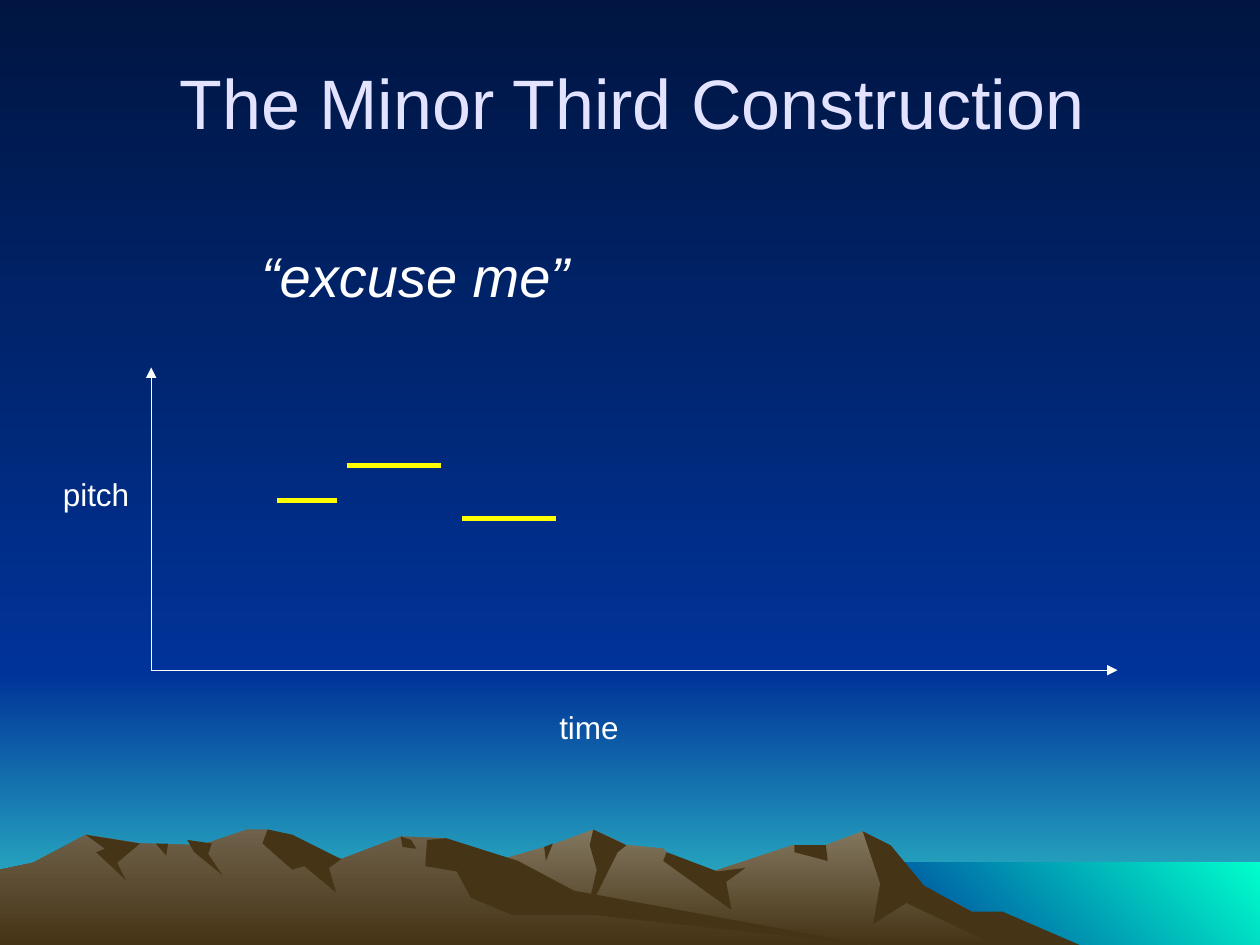
from lxml import etree
from pptx import Presentation
from pptx.dml.color import RGBColor
from pptx.enum import shapes, text
from pptx.oxml.ns import qn
from pptx.util import Pt

THEME = {
    "font": "Arial",
    "title_size": 40, "body_size": 32, "label_size": 18,
    "title": "E3E3FF", "text": "FFFFFF", "note": "FFFF00",
    "sky": ("001541", "003399"), "horizon": ("003399", "33CCCC"),
    "water": ("003399", "00FFCC"),
    "far_ridge": ("82775F", "463416"), "near_ridge": ("6F614A", "463416"),
    "shade": ("463416",),
}
WIDTH, HEIGHT = 720, 540

# Content: text, (left, top, width, height)
TITLE = ("The Minor Third Construction", (7, 13, 708, 90))
PHRASE = ("“excuse me”", (142, 134.5, 614, 65))
LABELS = [("pitch", (28.8, 268, 52.5, 29)), ("time", (312.5, 401, 49, 29))]

# Axes share an origin; each note is start, end, height
ORIGIN = (86.4, 383)
AXIS_ENDS = [(ORIGIN[0], 210), (638.6, ORIGIN[1])]
NOTES = [(158.5, 192.5, 285.8), (198, 252, 266), (264, 318, 296.5)]

# Bands reach the right and bottom edges: colours, left, top, gradient angle
BANDS = [("horizon", 0, 384, 270), ("water", 492, 493, 45)]
SKY_DEPTH = 384

# Mountains, from back to front: colours, outline
MOUNTAINS = [
    ("far_ridge", [
        (591, HEIGHT), (521, 503), (493, 475), (472, 483), (453, 483),
        (408, 498), (386, 493), (379, 485), (358, 483), (339, 474),
        (315, 483), (284, 492), (186, HEIGHT)]),
    ("shade", [
        (617, HEIGHT), (573, 521), (555, 521), (528, 506), (509, 483),
        (493, 475), (503, 505), (499, 528), (518, 516), (569, HEIGHT)]),
    ("shade", [
        (339, 474), (337, 483), (341, 497), (335, 523), (353, 487), (358, 483)]),
    ("shade", [(381, 487), (379, 492), (418, 520), (415, 504), (426, 496),
               (410, 498)]),
    ("shade", [(454, 483), (454, 487), (473, 492), (472, 483)]),
    ("shade", [(311, 484), (316, 482), (312, 492)]),
    ("near_ridge", [
        (497, HEIGHT), (311, 513), (255, 479), (229, 478), (195, 491),
        (161, 477), (153, 474), (141, 474), (115, 483), (80, 482), (49, 477),
        (19, 493), (0, 497), (0, HEIGHT)]),
    ("shade", [
        (153, 474), (150, 482), (167, 497), (174, 495), (192, 510), (188, 496),
        (195, 491), (167, 477)]),
    ("shade", [
        (255, 479), (244, 480), (243, 495), (261, 498), (269, 513), (293, 523),
        (340, 523), (497, HEIGHT), (328, 509), (296, 492)]),
    ("shade", [(229, 478), (235, 480), (238, 485), (230, 484)]),
    ("shade", [(107, 480), (121, 482), (119, 488), (127, 500), (111, 487)]),
    ("shade", [(96, 482), (95, 489), (89, 482)]),
    ("shade", [
        (80, 482), (67, 493), (72, 503), (55, 487), (60, 485), (49, 477)]),
]


def paint(shape, colours, angle=270):
    """Fill with one colour or a two-colour gradient, without line or shadow."""
    if len(colours) == 1:
        shape.fill.solid()
        shape.fill.fore_color.rgb = RGBColor.from_string(colours[0])
    else:
        shape.fill.gradient()
        shape.fill.gradient_angle = angle
        for stop, colour in zip(shape.fill.gradient_stops, colours):
            stop.color.rgb = RGBColor.from_string(colour)
    shape.line.fill.background()
    shape.shadow.inherit = False


def add_band(slide, colours, left, top, bottom=HEIGHT, angle=270):
    band = slide.shapes.add_shape(
        shapes.MSO_SHAPE.RECTANGLE,
        Pt(left), Pt(top), Pt(WIDTH - left), Pt(bottom - top))
    paint(band, THEME[colours], angle)


def write(shape, words, box, *, size, colour, italic=False, wrap=True,
          align=text.PP_ALIGN.LEFT, anchor=text.MSO_ANCHOR.TOP, before=0):
    """Place a shape and give it one formatted paragraph."""
    shape.left, shape.top, shape.width, shape.height = map(Pt, box)
    frame = shape.text_frame
    frame.word_wrap = wrap
    frame.auto_size = (text.MSO_AUTO_SIZE.NONE if wrap
                       else text.MSO_AUTO_SIZE.SHAPE_TO_FIT_TEXT)
    frame.vertical_anchor = anchor
    paragraph = frame.paragraphs[0]
    paragraph.alignment = align
    paragraph.space_before = Pt(before)
    run = paragraph.add_run()
    run.text = words
    run.font.name = THEME["font"]
    run.font.size = Pt(size)
    run.font.italic = italic
    run.font.color.rgb = RGBColor.from_string(colour)
    return paragraph


def draw_line(slide, start, end, colour, width, arrow=False):
    line = slide.shapes.add_connector(
        shapes.MSO_CONNECTOR.STRAIGHT, *map(Pt, start + end))
    line.line.color.rgb = RGBColor.from_string(colour)
    line.line.width = Pt(width)
    properties = line._element.spPr
    if arrow:
        etree.SubElement(properties.find(qn("a:ln")), qn("a:tailEnd"),
                         type="triangle")
    etree.SubElement(properties, qn("a:effectLst"))


def main():
    presentation = Presentation()
    presentation.slide_width, presentation.slide_height = Pt(WIDTH), Pt(HEIGHT)
    slide = presentation.slides.add_slide(presentation.slide_layouts[1])
    title, body = slide.placeholders

    # Sky, water and mountains
    add_band(slide, "sky", 0, 0, bottom=SKY_DEPTH)
    for colours, left, top, angle in BANDS:
        add_band(slide, colours, left, top, angle=angle)
    for colours, outline in MOUNTAINS:
        builder = slide.shapes.build_freeform(*outline[0], scale=Pt(1))
        builder.add_line_segments(outline[1:], close=True)
        paint(builder.convert_to_shape(), THEME[colours])

    # Title and phrase, brought in front of the scenery
    for placeholder in (title, body):
        slide.shapes._spTree.append(placeholder._element)
    write(title, *TITLE, size=THEME["title_size"], colour=THEME["title"],
          align=text.PP_ALIGN.CENTER, anchor=text.MSO_ANCHOR.MIDDLE)
    phrase = write(body, *PHRASE, size=THEME["body_size"], colour=THEME["text"],
                   italic=True, before=6.4)
    properties = phrase._p.get_or_add_pPr()
    properties.set("marL", "0")
    properties.set("indent", "0")
    etree.SubElement(properties, qn("a:buNone"))

    # Axes and their labels
    for end in AXIS_ENDS:
        draw_line(slide, ORIGIN, end, THEME["text"], 0.75, arrow=True)
    for words, box in LABELS:
        write(slide.shapes.add_textbox(*map(Pt, box)), words, box, wrap=False,
              size=THEME["label_size"], colour=THEME["text"])

    # Pitch of each syllable
    for start, end, height in NOTES:
        draw_line(slide, (start, height), (end, height), THEME["note"], 3)

    presentation.save("out.pptx")


if __name__ == "__main__":
    main()
